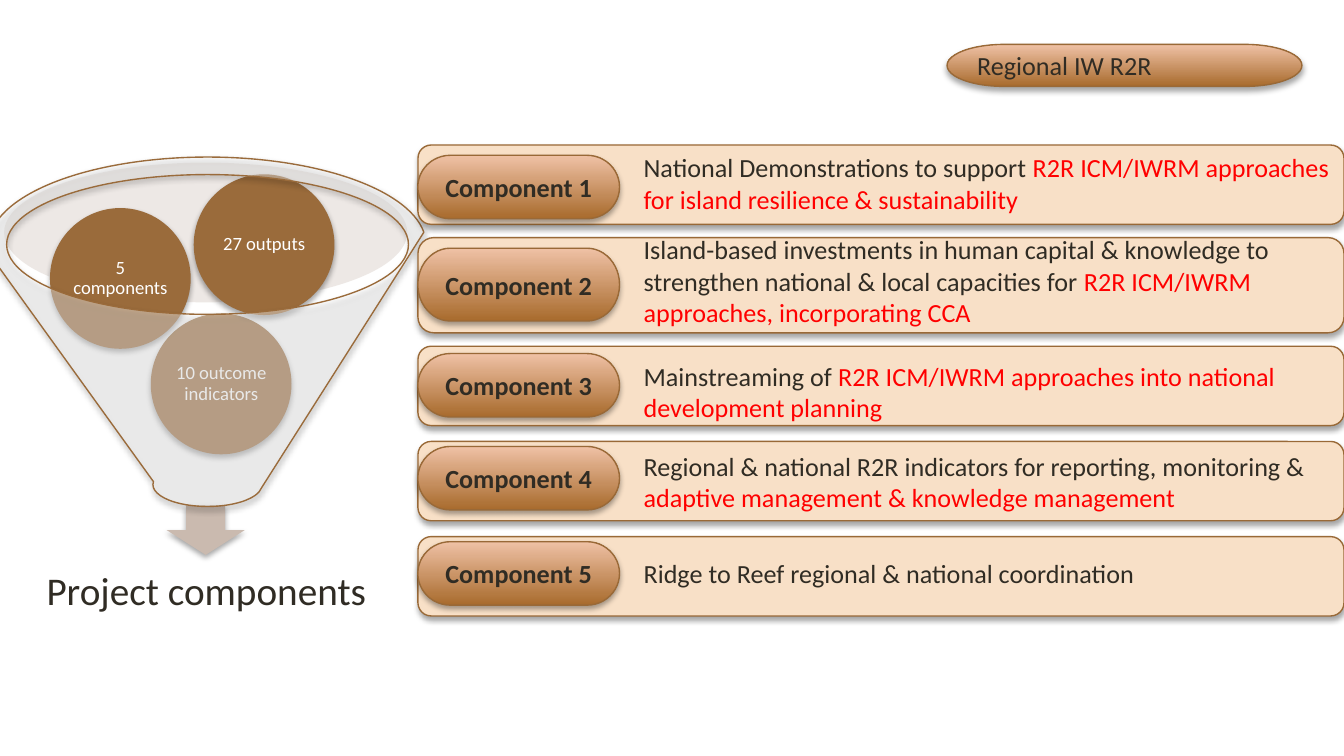
from lxml.etree import SubElement
from pptx import Presentation
from pptx.dml.color import RGBColor
from pptx.enum.shapes import MSO_SHAPE as SHAPE
from pptx.enum.text import MSO_ANCHOR as ANCHOR, PP_ALIGN as ALIGN
from pptx.oxml.ns import qn
from pptx.util import Pt

INK = RGBColor(0x30, 0x2C, 0x24)
RED = RGBColor(0xFF, 0x00, 0x00)
WHITE = RGBColor(0xFF, 0xFF, 0xFF)
BROWN = RGBColor(0x9A, 0x6B, 0x3B)
OUTLINE = RGBColor(0x99, 0x69, 0x37)
CREAM = RGBColor(0xF8, 0xE0, 0xC7)
COPPER = RGBColor(0xA8, 0x6B, 0x2D)
PEACH = RGBColor(0xEF, 0xC1, 0xA5)
RIM = RGBColor(0xD4, 0xC7, 0xBF)
ARROW = RGBColor(0xCA, 0xBA, 0xAF)

prs = Presentation()
prs.slide_width, prs.slide_height = Pt(720), Pt(405)
slide = prs.slides.add_slide(prs.slide_layouts[6])


def add_part(kind, box, fill=None, line=None, opacity=100, shadow=True):
    part = slide.shapes.add_shape(kind, *map(Pt, box))
    if fill is None:
        part.fill.gradient()
        part.fill.gradient_angle = 90
        for stop, color, position in zip(part.fill.gradient_stops, (COPPER, PEACH), (0, 1)):
            stop.color.rgb = color
            stop.position = position
    else:
        part.fill.solid()
        part.fill.fore_color.rgb = fill
    if line is None:
        part.line.fill.background()
    else:
        part.line.color.rgb = line
        part.line.width = Pt(0.75)
    properties = part.element.spPr
    if opacity < 100:
        tint = properties.find(qn("a:solidFill")).find(qn("a:srgbClr"))
        SubElement(tint, qn("a:alpha"), val=str(opacity * 1000))
    part.shadow.inherit = False
    if shadow:
        outer = SubElement(properties.find(qn("a:effectLst")), qn("a:outerShdw"),
                           blurRad=str(Pt(3.1)), dist=str(Pt(1.8)), dir="5400000", rotWithShape="0")
        black = SubElement(outer, qn("a:srgbClr"), val="000000")
        SubElement(black, qn("a:alpha"), val="35000")
    return part


def write(part, runs, size, align=ALIGN.LEFT, anchor=ANCHOR.MIDDLE, inset=None, bold=None, spacing=None):
    frame = part.text_frame
    frame.word_wrap = True
    frame.vertical_anchor = anchor
    if inset is not None:
        frame.margin_left = frame.margin_right = frame.margin_top = frame.margin_bottom = Pt(inset)
    paragraph = frame.paragraphs[0]
    paragraph.alignment = align
    paragraph.line_spacing = spacing
    for words, color in runs:
        run = paragraph.add_run()
        run.text = words
        run.font.name = "Calibri"
        run.font.size = Pt(size)
        run.font.bold = bold
        run.font.color.rgb = color


add_part(SHAPE.OVAL, (2.2, 87.1, 216, 74.9), RIM, opacity=40, shadow=False)
add_part(SHAPE.DOWN_ARROW, (89.3, 270.7, 41.8, 26.6), ARROW)
caption = slide.shapes.add_textbox(Pt(10.1), Pt(292.3), Pt(200.9), Pt(50.4))
write(caption, [("Project components", INK)], 21, ALIGN.CENTER, inset=11.5, spacing=0.9)

balls = [
    ("10 outcome indicators", 80.8, 168),
    ("5 components", 26.8, 111.5),
    ("27 outputs", 103.8, 93.4),
]
for words, left, top in balls:
    add_part(SHAPE.OVAL, (left, top, 75.4, 75.4), BROWN)
    label = slide.shapes.add_textbox(Pt(left + 11), Pt(top + 11), Pt(53.4), Pt(53.4))
    write(label, [(words, WHITE)], 10, ALIGN.CENTER, inset=0.9, spacing=0.9)

add_part(SHAPE.FUNNEL, (-5.8, 84.2, 234, 187.2), WHITE, BROWN, opacity=40)

components = [
    ((77.7, 42.5), (83.2, 34), (77.7, 41), "National Demonstrations to support ",
     "R2R ICM/IWRM approaches for island resilience & sustainability"),
    ((127.3, 51), (133, 39), (121.7, 58.3),
     "Island-based investments in human capital & knowledge to strengthen national & local capacities for ",
     "R2R ICM/IWRM approaches, incorporating CCA"),
    ((185.5, 42.5), (189.4, 34), (189.4, 41), "Mainstreaming of ",
     "R2R ICM/IWRM approaches into national development planning"),
    ((236.5, 42.5), (239.2, 34), (237.6, 41),
     "Regional & national R2R indicators for reporting, monitoring & ",
     "adaptive management & knowledge management"),
    ((287.5, 42.5), (290.2, 34), (295.2, 24.5),
     "Ridge to Reef regional & national coordination", ""),
]
for number, (band, pill, text, plain, accent) in enumerate(components, 1):
    add_part(SHAPE.ROUNDED_RECTANGLE, (223.9, band[0], 496.1, band[1]), CREAM, OUTLINE)
    badge = add_part(SHAPE.FLOWCHART_TERMINATOR, (223.9, pill[0], 108, pill[1]), line=OUTLINE)
    write(badge, [(f"Component {number}", INK)], 14, ALIGN.CENTER, bold=True)
    description = slide.shapes.add_textbox(Pt(337.7), Pt(text[0]), Pt(382.3), Pt(text[1]))
    runs = [(plain, INK), (accent, RED)] if accent else [(plain, INK)]
    write(description, runs, 14, anchor=ANCHOR.TOP)

programme = add_part(SHAPE.FLOWCHART_TERMINATOR, (507.4, 23.8, 190.1, 22.5), line=OUTLINE)
write(programme, [("Regional IW R2R", INK)], 14)

prs.save("out.pptx")
